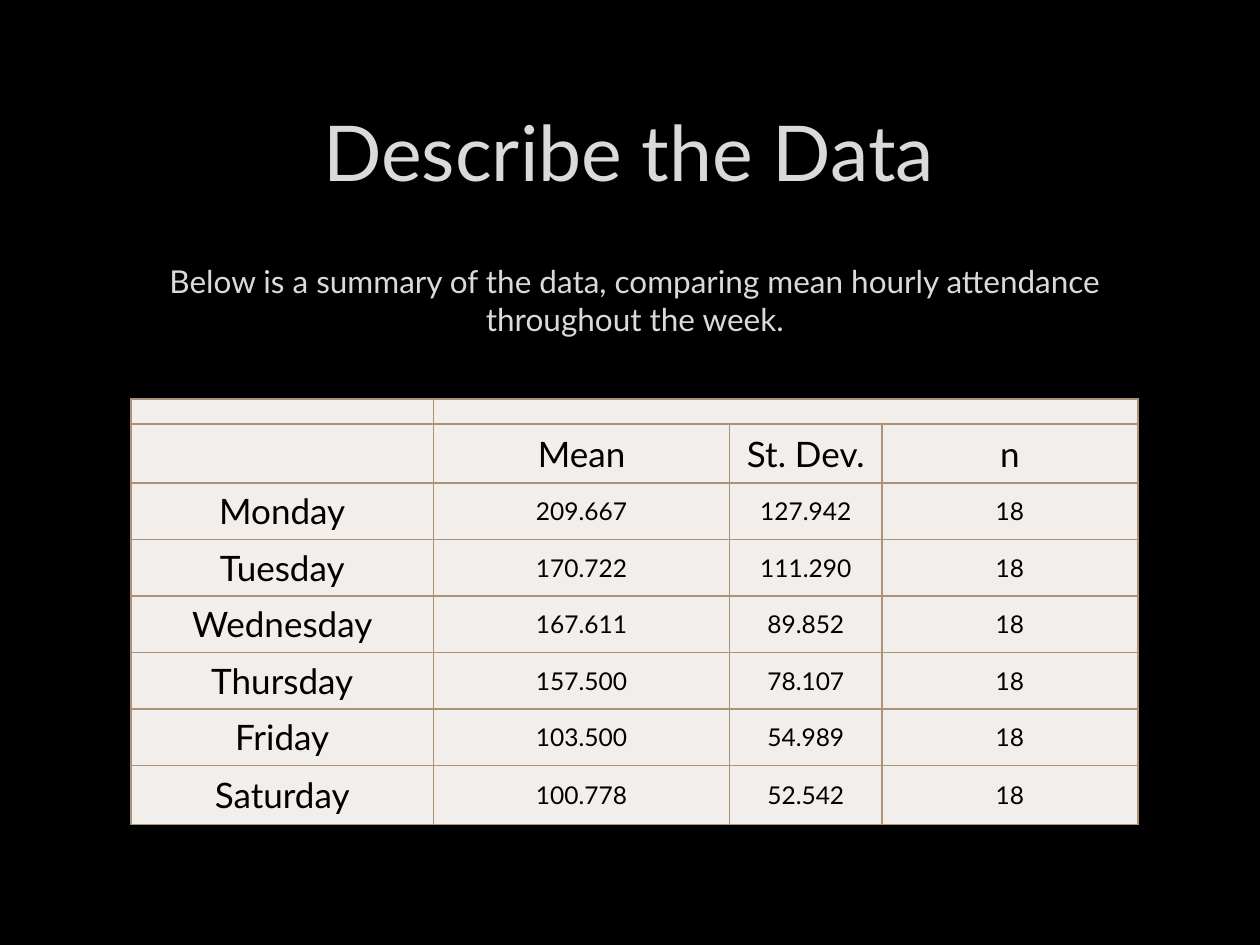
from lxml.etree import SubElement
from pptx import Presentation
from pptx.dml.color import RGBColor
from pptx.enum.text import MSO_ANCHOR, PP_ALIGN
from pptx.oxml.ns import qn
from pptx.util import Cm, Pt

DAYS = [
    ("Monday", "209.667", "127.942", "18"),
    ("Tuesday", "170.722", "111.290", "18"),
    ("Wednesday", "167.611", "89.852", "18"),
    ("Thursday", "157.500", "78.107", "18"),
    ("Friday", "103.500", "54.989", "18"),
    ("Saturday", "100.778", "52.542", "18"),
]
HEADER = ("", "Mean", "St. Dev.", "n")


def rgb(code):
    return RGBColor.from_string(code)


def write(tf, text, size=18, color="000000", font="Lato"):
    p = tf.paragraphs[0]
    p.alignment = PP_ALIGN.CENTER
    if not text:
        SubElement(p._p, qn("a:endParaRPr"), sz=str(size * 100))
        return
    r = p.add_run()
    r.text = text
    r.font.name = font
    r.font.size = Pt(size)
    r.font.color.rgb = rgb(color)


class Deck:
    """Holds the dark style and the current slide."""

    background = "000000"
    light = "DADADA"
    cell_fill = "F1EEEC"
    border = "AD9277"

    def __init__(self):
        self.prs = Presentation()
        self.prs.slide_width, self.prs.slide_height = Cm(25.4), Cm(19.05)

    def add_slide(self):
        self.s = self.prs.slides.add_slide(self.prs.slide_layouts[6])
        fill = self.s.background.fill
        fill.solid()
        fill.fore_color.rgb = rgb(self.background)

    def add_text(self, text, x, y, w, h, size, anchor=MSO_ANCHOR.TOP):
        sp = self.s.shapes.add_textbox(Cm(x), Cm(y), Cm(w), Cm(h))
        tf = sp.text_frame
        tf.word_wrap = True
        tf.vertical_anchor = anchor
        write(tf, text, size=size, color=self.light)

    def add_borders(self, cell):
        tc_pr = cell._tc.get_or_add_tcPr()
        for i, side in enumerate(("lnL", "lnR", "lnT", "lnB")):
            ln = tc_pr.makeelement(qn(f"a:{side}"), {"w": str(Pt(1))})
            fill = SubElement(ln, qn("a:solidFill"))
            SubElement(fill, qn("a:srgbClr"), val=self.border)
            tc_pr.insert(i, ln)

    def style_cell(self, cell, text, size):
        cell.margin_left = cell.margin_right = Cm(0.18)
        cell.margin_top = cell.margin_bottom = 0
        cell.vertical_anchor = MSO_ANCHOR.MIDDLE
        cell.fill.solid()
        cell.fill.fore_color.rgb = rgb(self.cell_fill)
        self.add_borders(cell)
        write(cell.text_frame, text, size=size)

    def add_table(self, rows, x, y, widths, heights):
        frame = self.s.shapes.add_table(
            len(rows), len(widths), Cm(x), Cm(y), Cm(sum(widths)), Cm(sum(heights)))
        table = frame.table
        for col, width in zip(table.columns, widths):
            col.width = Cm(width)
        for row, height in zip(table.rows, heights):
            row.height = Cm(height)
        for i, values in enumerate(rows):
            for j, text in enumerate(values):
                label = i == 1 or j == 0
                size = 10 if not text else 20 if label else 14
                self.style_cell(table.cell(i, j), text, size)
        table.cell(0, 1).merge(table.cell(0, len(widths) - 1))


def main():
    deck = Deck()
    deck.add_slide()
    deck.add_text("Describe the Data", 1.9, 1.7, 21.56, 2.69, 44, MSO_ANCHOR.MIDDLE)
    deck.add_table(
        [("",) * len(HEADER), HEADER, *DAYS], 2.64, 8.04,
        widths=[6.1, 5.97, 3.07, 5.16],
        heights=[0.51, 1.19] + [1.14] * (len(DAYS) - 1) + [1.19])
    deck.add_text(
        "Below is a summary of the data, comparing mean hourly attendance "
        "throughout the week.", 2.54, 5.16, 20.52, 1.8, 18)
    deck.prs.save("out.pptx")


if __name__ == "__main__":
    main()
